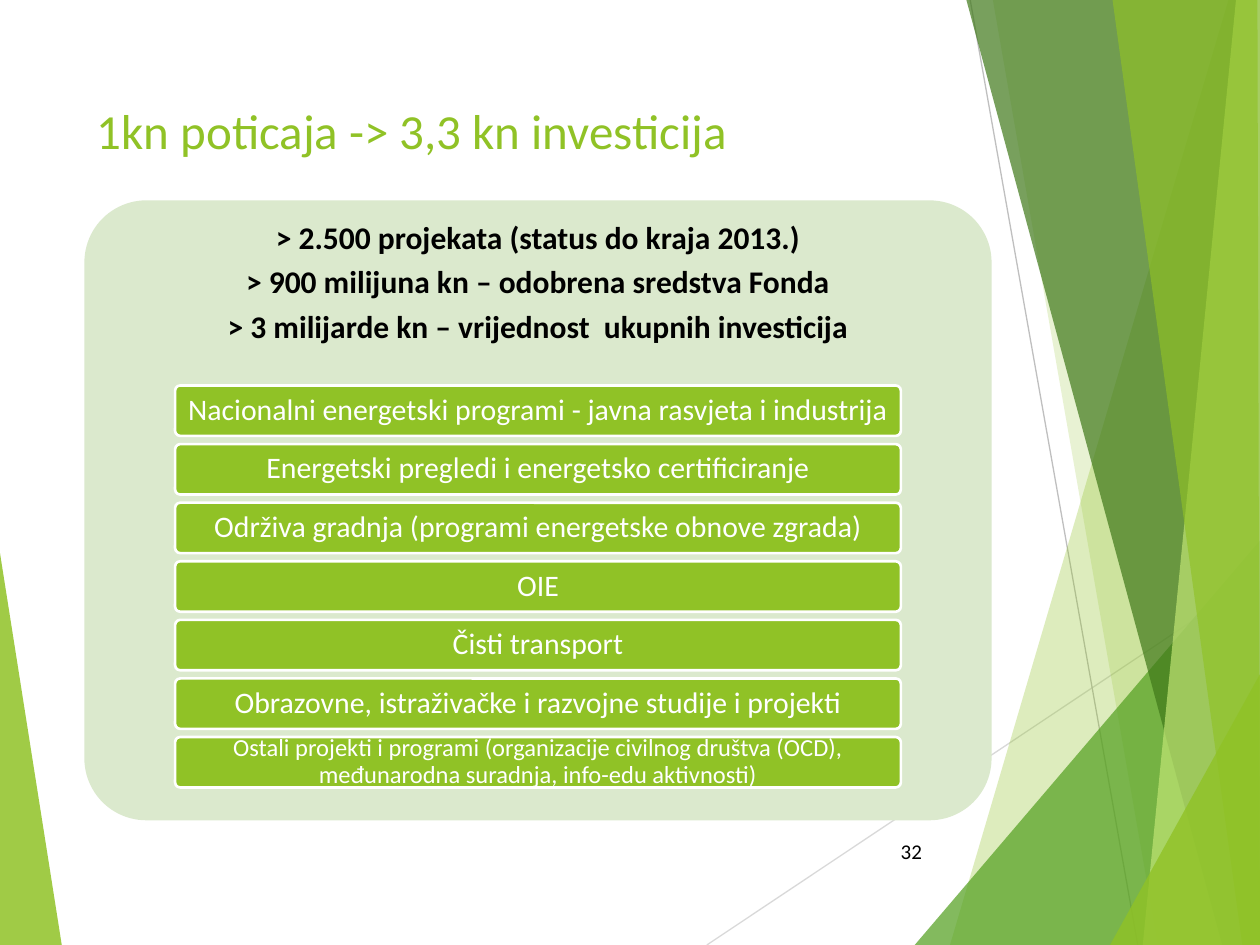
from lxml.etree import SubElement
from pptx import Presentation
from pptx.dml.color import RGBColor
from pptx.enum.shapes import MSO_CONNECTOR, MSO_SHAPE
from pptx.enum.text import MSO_ANCHOR, PP_ALIGN
from pptx.oxml.ns import qn
from pptx.util import Inches, Pt

# The slide is a grid of 100 columns by 75 rows; every length is in cells.
COLUMNS, ROWS = 100, 75
CELL = Inches(0.1)
FONT = "Calibri"
COLORS = {
    "lime": "90C226", "green": "54A021", "forest": "3F7819", "pale lime": "C0E474",
    "panel": "DBE9CD", "light grey": "D9D9D9", "grey": "BFBFBF",
    "white": "FFFFFF", "black": "000000",
}

LEFT_FACET = ("lime", 85, [(0, 43.9), (4.9, ROWS), (0, ROWS)])
RIGHT_FACETS = [  # colour, opacity in percent, corners
    ("lime", 30, [(97.5, 0), (75.4, ROWS), (COLUMNS, ROWS), (COLUMNS, 0)]),
    ("lime", 20, [(78.8, 0), (91.9, ROWS), (COLUMNS, ROWS), (COLUMNS, 0)]),
    ("green", 72, [(72.6, ROWS), (COLUMNS, 42.9), (COLUMNS, ROWS)]),
    ("forest", 70, [(76.7, 0), (97, ROWS), (COLUMNS, ROWS), (COLUMNS, 0)]),
    ("pale lime", 70, [(98.1, 0), (90.7, ROWS), (COLUMNS, ROWS), (COLUMNS, 0)]),
    ("lime", 65, [(88.3, 0), (98.6, ROWS), (COLUMNS, ROWS), (99.8, 0)]),
    ("lime", 80, [(88.1, ROWS), (COLUMNS, 53.5), (COLUMNS, ROWS)]),
]
HEADLINES = [
    "> 2.500 projekata (status do kraja 2013.)",
    "> 900 milijuna kn – odobrena sredstva Fonda",
    "> 3 milijarde kn – vrijednost  ukupnih investicija",
]
PROGRAMMES = [  # text, font size
    ("Nacionalni energetski programi - javna rasvjeta i industrija", 17),
    ("Energetski pregledi i energetsko certificiranje", 17),
    ("Održiva gradnja (programi energetske obnove zgrada)", 17),
    ("OIE", 17),
    ("Čisti transport", 17),
    ("Obrazovne, istraživačke i razvojne studije i projekti", 17),
    ("Ostali projekti i programi (organizacije civilnog društva (OCD), "
     "međunarodna suradnja, info-edu aktivnosti)", 14),
]
FIRST_BAR_ROW, BAR_PITCH = 30.6, 4.65


def cells(*counts):
    return [round(count * CELL) for count in counts]


def color(name):
    return RGBColor.from_string(COLORS[name])


def paint(shape, fill):
    shape.shadow.inherit = False
    shape.fill.solid()
    shape.fill.fore_color.rgb = color(fill)
    shape.line.fill.background()


def add_facet(slide, fill, opacity, corners):
    points = [cells(*corner) for corner in corners]
    builder = slide.shapes.build_freeform(*points[0])
    builder.add_line_segments(points[1:], close=True)
    facet = builder.convert_to_shape()
    paint(facet, fill)
    fill_color = facet._element.spPr.find(qn("a:solidFill"))[0]
    SubElement(fill_color, qn("a:alpha"), val=str(opacity * 1000))


def add_thin_line(slide, start, end, stroke):
    line = slide.shapes.add_connector(
        MSO_CONNECTOR.STRAIGHT, *cells(*start), *cells(*end))
    line.line.color.rgb = color(stroke)
    line.line.width = Pt(0.75)
    SubElement(line._element.spPr, qn("a:effectLst"))


def add_rounded_box(slide, box, fill):
    shape = slide.shapes.add_shape(MSO_SHAPE.ROUNDED_RECTANGLE, *cells(*box))
    shape.adjustments[0] = 0.1
    paint(shape, fill)
    return shape


def write(shape, lines, size, ink, insets, anchor=MSO_ANCHOR.TOP,
          align=PP_ALIGN.LEFT, bold=False, line_spacing=1.0, gap=0):
    """Fill a shape with one paragraph per line; insets are (sides, top, bottom)."""
    frame = shape.text_frame
    frame.word_wrap = True
    frame.vertical_anchor = anchor
    sides, frame.margin_top, frame.margin_bottom = cells(*insets)
    frame.margin_left = frame.margin_right = sides
    frame.text = "\n".join(lines)
    for paragraph in frame.paragraphs:
        paragraph.alignment = align
        paragraph.line_spacing = line_spacing
        paragraph.space_after = Pt(gap)
        paragraph.font.name = FONT
        paragraph.font.size = Pt(size)
        paragraph.font.bold = bold
        paragraph.font.color.rgb = color(ink)


def add_text(slide, box, lines, size, ink, insets, **style):
    write(slide.shapes.add_textbox(*cells(*box)), lines, size, ink, insets, **style)


def add_programme_bar(slide, index, text, size):
    row = FIRST_BAR_ROW + index * BAR_PITCH
    bar = add_rounded_box(slide, (13.9, row, 57.6, 4), "lime")
    bar.line.color.rgb = color("white")
    bar.line.width = Pt(1.5)
    write(bar, [text], size, "white", (0.5, 0.4, 0.4), anchor=MSO_ANCHOR.MIDDLE,
          align=PP_ALIGN.CENTER, line_spacing=0.9)


def add_background(slide):
    add_facet(slide, *LEFT_FACET)
    add_thin_line(slide, (56.1, ROWS), (COLUMNS, 45.7), "light grey")
    add_thin_line(slide, (77, 0), (90.3, ROWS), "grey")
    for facet in RIGHT_FACETS:
        add_facet(slide, *facet)


def main():
    presentation = Presentation()
    presentation.slide_width, presentation.slide_height = cells(COLUMNS, ROWS)
    slide = presentation.slides.add_slide(presentation.slide_layouts[6])

    add_background(slide)
    add_text(slide, (6.7, 2.7, 72.1, 10.4), ["1kn poticaja -> 3,3 kn investicija"],
             28, "lime", (1, 5.9, 0))
    add_text(slide, (70.5, 66.1, 5.6, 4), ["32"], 12, "black", (1, 0.5, 0.5))
    add_rounded_box(slide, (6.7, 15.9, 72, 49.2), "panel")
    add_text(slide, (6.7, 15.9, 72, 14.8), HEADLINES, 18, "black", (0.7, 1.7, 0.7),
             align=PP_ALIGN.CENTER, bold=True, line_spacing=0.9, gap=6)
    for index, (text, size) in enumerate(PROGRAMMES):
        add_programme_bar(slide, index, text, size)

    presentation.save("out.pptx")


if __name__ == "__main__":
    main()
